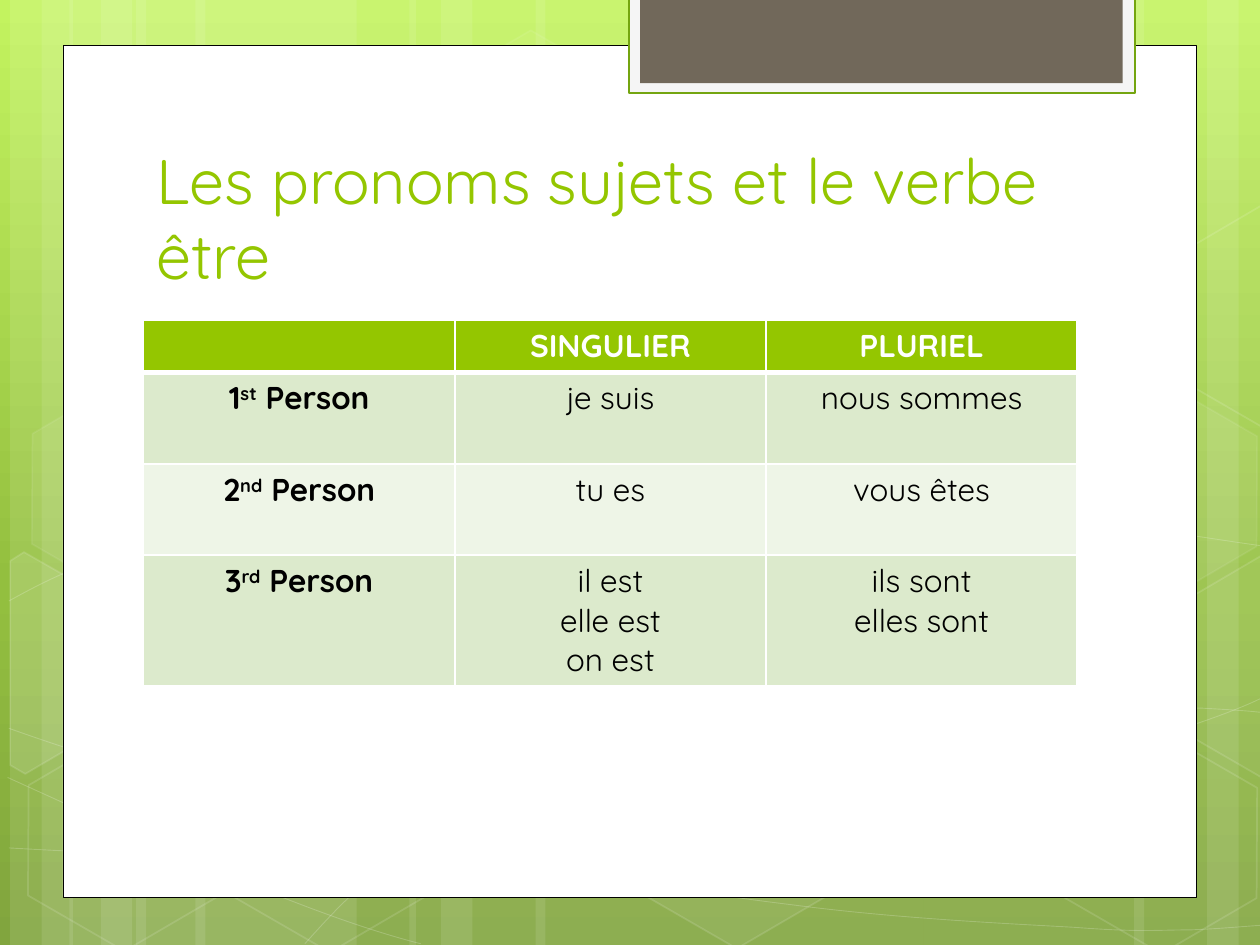
from copy import deepcopy
from dataclasses import dataclass
from math import cos, radians, sin

from lxml.etree import SubElement
from pptx import Presentation
from pptx.dml.color import RGBColor
from pptx.enum.shapes import MSO_SHAPE as Preset
from pptx.enum.text import MSO_ANCHOR as Anchor, MSO_AUTO_SIZE as AutoSize, PP_ALIGN as Align
from pptx.oxml.ns import qn
from pptx.util import Inches, Pt

WHITE = RGBColor(0xFF, 0xFF, 0xFF)
BLACK = RGBColor(0x00, 0x00, 0x00)
LIME = RGBColor(0x94, 0xC6, 0x00)
MIST = RGBColor(0xF5, 0xF5, 0xF5)
MOSS = RGBColor(0x74, 0xA5, 0x10)
TAUPE = RGBColor(0x71, 0x68, 0x5A)
BAND_DARK = RGBColor(0xDC, 0xEA, 0xCC)
BAND_LIGHT = RGBColor(0xEE, 0xF5, 0xE7)
SKY = [(0, RGBColor(0xC3, 0xF3, 0x5F)), (0.62, RGBColor(0x93, 0xBF, 0x3F)),
       (1, RGBColor(0x81, 0xA5, 0x3E))]
FONT = "Quicksand"
TILT = 30


@dataclass
class Look:
    fill: RGBColor | None = None
    fill_alpha: int = 100
    line: RGBColor | None = None
    width: float = 1
    line_alpha: int = 100


@dataclass
class Hexagon:
    left: float
    top: float
    fill_alpha: int
    line_alpha: int


@dataclass
class Shard:
    center: tuple
    points: list
    fill_alpha: int


@dataclass
class Row:
    height: float
    fill: RGBColor
    cells: list


STREAKS = [(1.08, 1.75, 0), (0.08, 0.5, 0), (0.33, 0.83, 0), (1.55, 1.75, 0), (0.55, 0.5, 0),
           (0.8, 0.83, 0), (7.33, 1.75, 180), (9.58, 0.5, 180), (9, 0.83, 180),
           (4.25, 3.08, 0), (3.25, 0.5, 0), (3.5, 0.83, 0)]
CURVES = [
    [[(0.07, 6.73)], [(0.61, 6.76), (1.15, 6.79), (1.9, 6.78)], [(2.65, 6.77), (3.58, 6.75), (4.58, 6.65)],
     [(5.58, 6.55), (7, 6.36), (7.92, 6.17)], [(8.83, 5.98), (9.77, 5.68), (10.07, 5.51)]],
    [[(0.07, 4.77)], [(0.36, 4.61), (0.65, 4.46), (1.21, 4.31)], [(1.78, 4.16), (2.59, 3.94), (3.47, 3.87)],
     [(4.36, 3.8), (5.44, 3.79), (6.54, 3.87)], [(7.64, 3.95), (9.47, 4.26), (10.07, 4.34)]],
    [[(0.06, 6.17)], [(1.27, 6.72), (2.47, 7.27), (3.34, 7.49)]],
    [[(0.07, 5.78)], [(0.38, 5.89), (0.7, 6), (1.28, 6.16)], [(1.86, 6.31), (2.73, 6.56), (3.57, 6.73)],
     [(4.4, 6.9), (5.45, 7.08), (6.28, 7.18)], [(7.11, 7.29), (8, 7.33), (8.53, 7.36)],
     [(9.05, 7.4), (9.19, 7.38), (9.45, 7.38)], [(9.71, 7.37), (9.89, 7.35), (10.07, 7.34)]],
    [[(2.42, 7.49)], [(2.6, 7.29), (2.78, 7.09), (3.02, 6.91)], [(3.26, 6.73), (3.6, 6.53), (3.88, 6.39)],
     [(4.16, 6.25), (4.33, 6.19), (4.7, 6.09)], [(5.06, 5.99), (5.73, 5.85), (6.08, 5.78)],
     [(6.44, 5.71), (6.49, 5.71), (6.8, 5.69)], [(7.11, 5.66), (7.6, 5.63), (7.94, 5.62)],
     [(8.29, 5.61), (8.86, 5.62), (8.86, 5.62)], [(9.53, 5.62)],
     [(9.71, 5.63), (9.88, 5.64), (9.97, 5.65)], [(10.06, 5.66), (10.03, 5.65), (10.06, 5.66)]],
]
HEXAGONS = [Hexagon(3.34, 0.36, 4, 8), Hexagon(4.97, 5.89, 6, 12), Hexagon(0.11, 5.91, 0, 12),
            Hexagon(0.14, 3.12, 7, 8), Hexagon(1.74, 5.92, 0, 12), Hexagon(7.53, 4.53, 10, 12),
            Hexagon(8.34, 5.93, 0, 12), Hexagon(8.34, 3.14, 7, 8)]
SHARDS = [
    Shard((0.36, 5.35), [(0.08, 4.45), (0.19, 4.38), (0.96, 4.82), (0.95, 5.7), (0.2, 6.14), (0.08, 6.07)], 10),
    Shard((9.85, 5.2), [(9.26, 4.85), (10.01, 4.41), (10.09, 4.46), (10.09, 6.13), (10.02, 6.17), (9.26, 5.73)], 4),
    Shard((9.85, 2.41), [(9.26, 2.07), (10.01, 1.63), (10.1, 1.68), (10.09, 3.35), (10.02, 3.39), (9.26, 2.95)], 0),
]
ROWS = [
    Row(0.41, LIME, ["", "SINGULIER", "PLURIEL"]),
    Row(0.73, BAND_DARK, [("1", "st", " Person"), "je suis", "nous sommes"]),
    Row(0.72, BAND_LIGHT, [("2", "nd", " Person"), "tu es", "vous êtes"]),
    Row(1.03, BAND_DARK, [("3", "rd", " Person"), "il est\nelle est\non est", "ils sont\nelles sont"]),
]


def set_alpha(solid, percent: int) -> None:
    if percent < 100:
        SubElement(solid[0], qn("a:alpha"), val=str(percent * 1000))


def dress(shape, look: Look) -> None:
    shape.shadow.inherit = False
    properties = shape.element.spPr
    if look.fill is None or look.fill_alpha == 0:
        shape.fill.background()
    else:
        shape.fill.solid()
        shape.fill.fore_color.rgb = look.fill
        set_alpha(properties.find(qn("a:solidFill")), look.fill_alpha)
    if look.line is None:
        shape.line.fill.background()
    else:
        shape.line.color.rgb = look.line
        shape.line.width = Pt(look.width)
        set_alpha(properties.find(qn("a:ln")).find(qn("a:solidFill")), look.line_alpha)


def draw_preset(page, preset, left: float, top: float, width: float, height: float, look: Look):
    shape = page.shapes.add_shape(preset, Inches(left), Inches(top), Inches(width), Inches(height))
    dress(shape, look)
    return shape


def draw_outline(page, points: list, look: Look, close: bool):
    corners = [(Inches(x), Inches(y)) for x, y in points]
    builder = page.shapes.build_freeform(*corners[0], scale=1.0)
    builder.add_line_segments(corners[1:], close=close)
    shape = builder.convert_to_shape()
    dress(shape, look)
    return shape


def draw_curve(page, segments: list, look: Look) -> None:
    shape = draw_outline(page, sum(segments, []), look, False)
    outline = shape.element.find(f".//{qn('a:path')}")
    steps = iter(outline.findall(qn("a:lnTo")))
    for segment in segments[1:]:
        part = SubElement(outline, qn("a:cubicBezTo" if len(segment) == 3 else "a:lnTo"))
        for _ in segment:
            step = next(steps)
            part.append(step[0])
            outline.remove(step)


def draw_shard(page, shard: Shard) -> None:
    cosine, sine = cos(radians(TILT)), sin(radians(TILT))
    middle_x, middle_y = shard.center
    offsets = [(x - middle_x, y - middle_y) for x, y in shard.points]
    upright = [(middle_x + x * cosine + y * sine, middle_y - x * sine + y * cosine) for x, y in offsets]
    shape = draw_outline(page, upright, Look(WHITE, shard.fill_alpha, WHITE, 1, 12), True)
    shape.rotation = TILT


def write(para, text: str, *, size: float = 18, color: RGBColor = BLACK, bold: bool = False,
          raised: bool = False, align=Align.CENTER) -> None:
    para.alignment = align
    span = para.add_run()
    span.text = text
    span.font.name, span.font.size, span.font.bold = FONT, Pt(size), bold
    span.font.color.rgb = color
    if raised:
        span.font._element.set("baseline", "30000")


def add_border(cell, side: str, width: float) -> None:
    line = SubElement(cell._tc.get_or_add_tcPr(), qn(f"a:ln{side}"), w=str(Pt(width)))
    SubElement(SubElement(line, qn("a:solidFill")), qn("a:srgbClr"), val=str(WHITE))


def paint_background(page) -> None:
    fill = page.background.fill
    fill.gradient()
    fill.gradient_angle = 270
    stops = page.element.find(f".//{qn('a:gsLst')}")
    stops.append(deepcopy(stops[0]))
    for stop, (position, color) in zip(fill.gradient_stops, SKY):
        stop.position = position
        stop.color.rgb = color


def draw_scenery(page) -> None:
    for left, width, turn in STREAKS:
        draw_preset(page, Preset.RECTANGLE, left, 0, width, 7.5, Look(WHITE, 10)).rotation = turn
    for segments in CURVES:
        draw_curve(page, segments, Look(line=WHITE, width=0.5, line_alpha=20))
    for item in HEXAGONS:
        look = Look(WHITE, item.fill_alpha, WHITE, 1, item.line_alpha)
        shape = draw_preset(page, Preset.HEXAGON, item.left, item.top, 1.75, 1.52, look)
        shape.adjustments[0] = 0.285
        shape.rotation = TILT
    for shard in SHARDS:
        draw_shard(page, shard)
    draw_preset(page, Preset.RECTANGLE, 0.5, 0.36, 9, 6.76, Look(WHITE, line=BLACK, width=0.5))
    draw_preset(page, Preset.RECTANGLE, 4.99, -0.02, 4.02, 0.76, Look(MIST, line=MOSS, width=1.25))
    draw_preset(page, Preset.RECTANGLE, 5.08, -0.02, 3.83, 0.68, Look(TAUPE))


def place_title(page) -> None:
    title = page.shapes.title
    title.left, title.top, title.width, title.height = map(Inches, (1.14, 1.12, 7.68, 1.25))
    frame = title.text_frame
    frame.word_wrap, frame.auto_size, frame.vertical_anchor = True, AutoSize.NONE, Anchor.BOTTOM
    write(frame.paragraphs[0], "Les pronoms sujets et le verbe être", size=36, color=LIME, align=Align.LEFT)
    title.element.getparent().append(title.element)


def fill_cell(cell, content, *, header: bool, below_header: bool, fill: RGBColor) -> None:
    for side, width in (("L", 1), ("R", 1), ("T", 3 if below_header else 1), ("B", 3 if header else 1)):
        add_border(cell, side, width)
    cell.fill.solid()
    cell.fill.fore_color.rgb = fill
    frame = cell.text_frame
    if isinstance(content, tuple):
        for index, part in enumerate(content):
            write(frame.paragraphs[0], part, bold=True, raised=index == 1)
    elif content:
        for index, text in enumerate(content.split("\n")):
            para = frame.add_paragraph() if index else frame.paragraphs[0]
            write(para, text, color=WHITE if header else BLACK, bold=header)


def draw_table(page) -> None:
    height = sum(row.height for row in ROWS)
    table = page.shapes.add_table(len(ROWS), 3, *map(Inches, (1.14, 2.54, 7.41, height))).table
    for index, row in enumerate(ROWS):
        table.rows[index].height = Inches(row.height)
        for column, content in enumerate(row.cells):
            fill_cell(table.cell(index, column), content, header=index == 0,
                      below_header=index == 1, fill=row.fill)


def main() -> None:
    deck = Presentation()
    deck.slide_width, deck.slide_height = Inches(10), Inches(7.5)
    page = deck.slides.add_slide(deck.slide_layouts[5])
    for build in (paint_background, draw_scenery, place_title, draw_table):
        build(page)
    deck.save("out.pptx")


if __name__ == "__main__":
    main()
